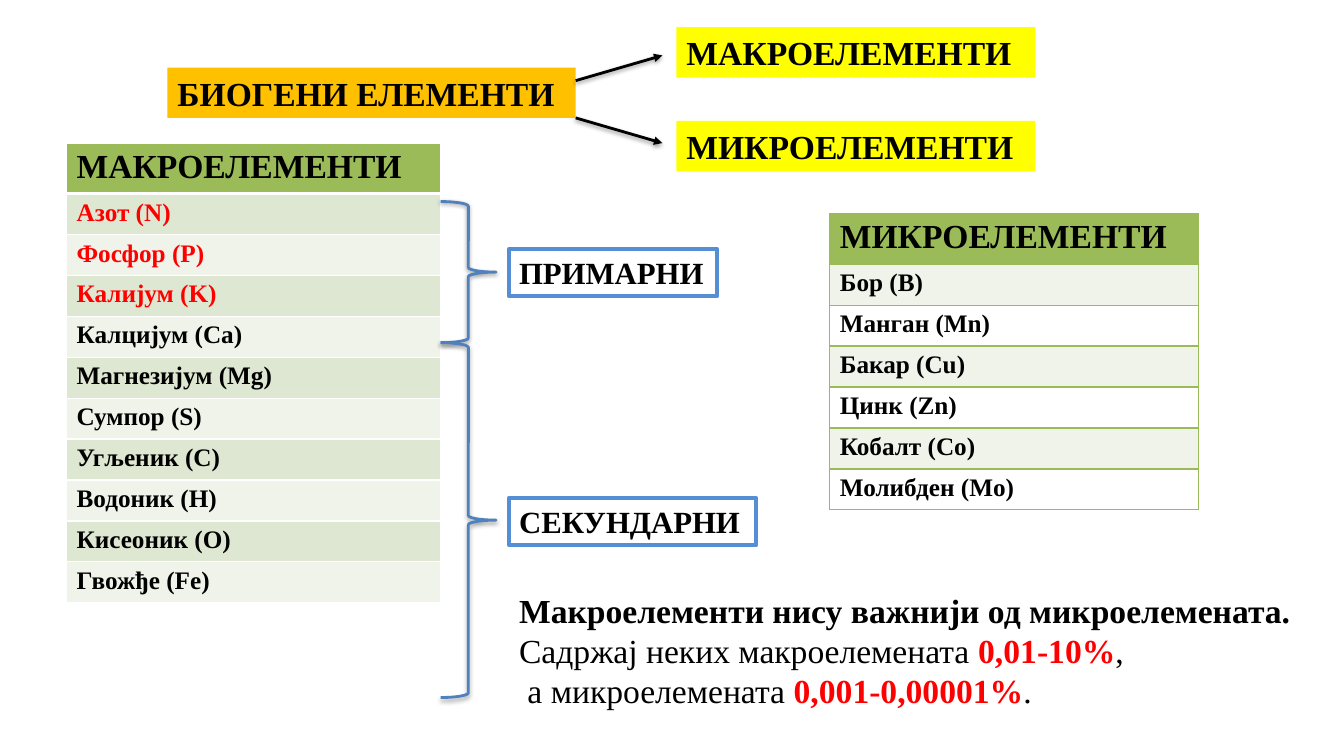
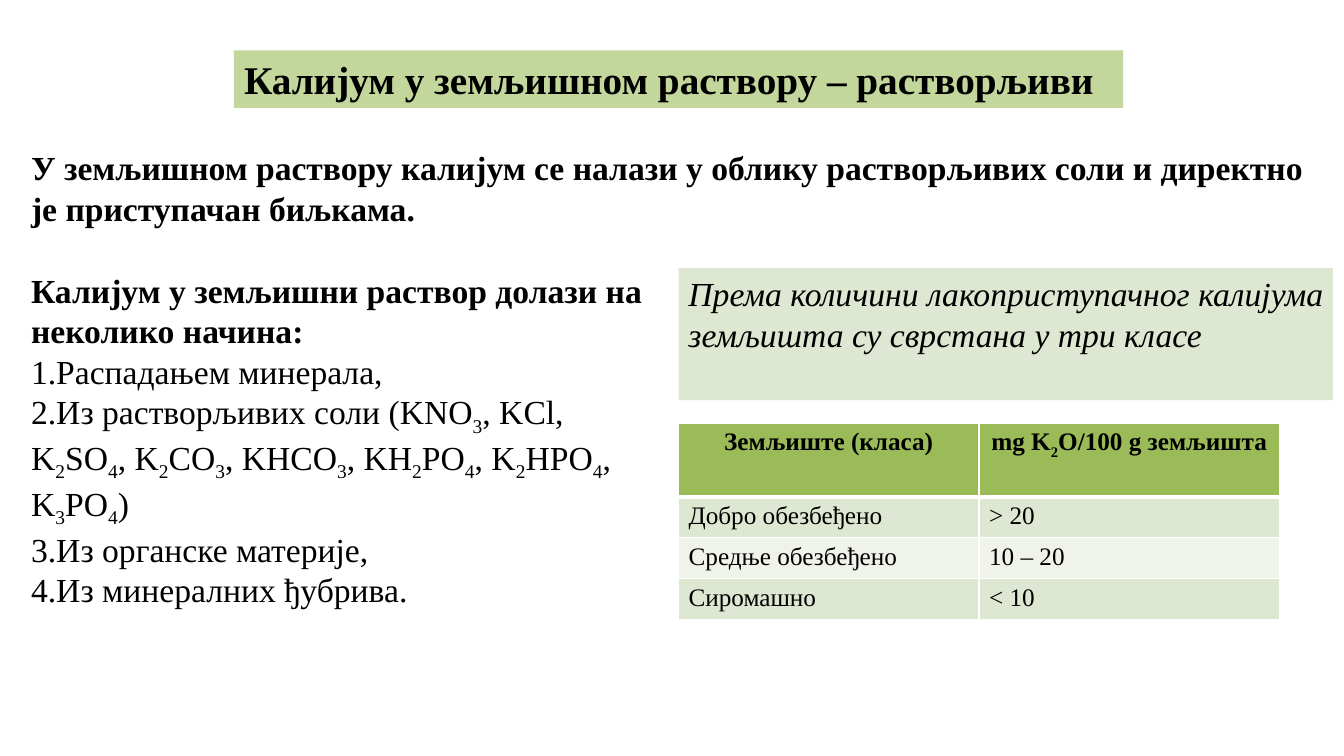
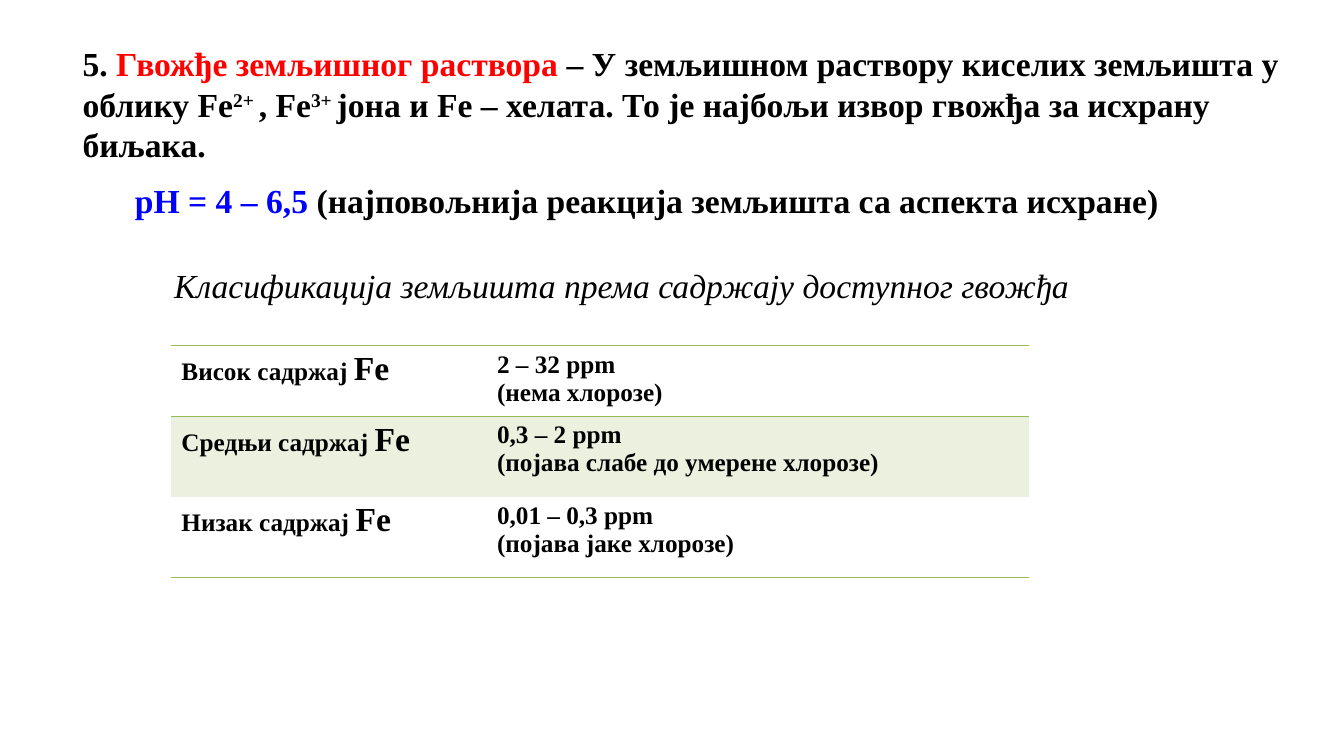
from lxml import etree
from pptx import Presentation
from pptx.dml.color import RGBColor
from pptx.enum.shapes import MSO_CONNECTOR, MSO_SHAPE
from pptx.enum.text import MSO_ANCHOR, MSO_AUTO_SIZE, PP_ALIGN
from pptx.oxml import parse_xml
from pptx.oxml.ns import nsdecls, qn
from pptx.util import Inches, Pt

TOP = MSO_ANCHOR.TOP
NO_AUTOFIT = MSO_AUTO_SIZE.NONE
LEFT, CENTER, JUSTIFY = PP_ALIGN.LEFT, PP_ALIGN.CENTER, PP_ALIGN.JUSTIFY
STRAIGHT = MSO_CONNECTOR.STRAIGHT
RIGHT_BRACE = MSO_SHAPE.RIGHT_BRACE
TITLE_ONLY, BLANK = 5, 6

FONT = "Times New Roman"
COLORS = {
    "black": "000000", "white": "FFFFFF", "red": "FF0000", "blue": "0000FF",
    "orange": "FFC000", "yellow": "FFFF00", "green": "9BBB59",
    "title_green": "C3D69B", "band": "DEE7D1", "band_light": "EFF3EA",
    "iron_band": "EBF1DE", "outline": "4F6228", "brace": "4F81BD", "frame": "558ED5",
}
BANDS = ("band", "band_light")
RED = {"color": "red"}
RED_BOLD = {"color": "red", "bold": True}
SUPERSCRIPT = {"baseline": 30}
SIDES = ("L", "R", "T", "B")


def rgb(name):
    return RGBColor.from_string(COLORS[name])


# Text: a paragraph is a string or a list of strings and (string, style) pairs
def style_run(run, size=24, color="black", bold=False, italic=False, baseline=0, outline=None):
    font = run.font
    font.name, font.size, font.bold, font.italic = FONT, Pt(size), bold, italic
    font.color.rgb = rgb(color)
    properties = run._r.get_or_add_rPr()
    if baseline:
        properties.set("baseline", str(baseline * 1000))
    if outline:
        properties.insert(0, parse_xml(
            f'<a:ln {nsdecls("a")} w="12700"><a:solidFill>'
            f'<a:srgbClr val="{COLORS[outline]}"/></a:solidFill></a:ln>'))


def write(frame, paragraphs, align=LEFT, **style):
    frame.word_wrap = True
    for index, parts in enumerate(paragraphs):
        paragraph = frame.add_paragraph() if index else frame.paragraphs[0]
        paragraph.alignment = align
        for part in [parts] if isinstance(parts, str) else parts:
            text, own_style = (part, {}) if isinstance(part, str) else part
            run = paragraph.add_run()
            run.text = text
            style_run(run, **{**style, **own_style})


def formula(text):
    """Split text into runs; the character after each underscore is a subscript."""
    first, *others = text.split("_")
    parts = [first]
    for other in others:
        parts.append((other[0], {"baseline": -25}))
        if other[1:]:
            parts.append(other[1:])
    return parts


# Shared shapes
def add_box(slide, box, paragraphs, fill=None, frame=None, **style):
    label = slide.shapes.add_textbox(*map(Inches, box))
    if fill:
        label.fill.solid()
        label.fill.fore_color.rgb = rgb(fill)
    if frame:
        label.line.color.rgb = rgb(frame)
        label.line.width = Pt(3)
    write(label.text_frame, paragraphs, **style)
    return label


def add_title(slide, box, text, fill, size):
    title = slide.shapes.title
    title.left, title.top, title.width, title.height = map(Inches, box)
    title.fill.solid()
    title.fill.fore_color.rgb = rgb(fill)
    title.text_frame.vertical_anchor = TOP
    title.text_frame.auto_size = NO_AUTOFIT
    write(title.text_frame, [text], size=size, bold=True)


def draw_line(shape, color):
    shape.line.color.rgb = rgb(color)
    shape.line.width = Pt(2)
    shape._element.spPr.append(parse_xml(
        f'<a:effectLst {nsdecls("a")}><a:outerShdw blurRad="40000" dist="20000" dir="5400000" '
        'rotWithShape="0"><a:srgbClr val="000000"><a:alpha val="38000"/></a:srgbClr>'
        '</a:outerShdw></a:effectLst>'))


def add_arrow(slide, start, end):
    arrow = slide.shapes.add_connector(STRAIGHT, *map(Inches, start + end))
    draw_line(arrow, "black")
    etree.SubElement(arrow.line._get_or_add_ln(), qn("a:tailEnd"), type="triangle")


def add_brace(slide, box):
    brace = slide.shapes.add_shape(RIGHT_BRACE, *map(Inches, box))
    brace.fill.background()
    draw_line(brace, "brace")


# Tables
def set_borders(cell, borders):
    properties = cell._tc.get_or_add_tcPr()
    for position, side in enumerate(SIDES):
        color, width = borders.get(side, (None, 0))
        paint = (f'<a:solidFill><a:srgbClr val="{COLORS[color]}"/></a:solidFill>'
                 if color else "<a:noFill/>")
        properties.insert(position, parse_xml(
            f'<a:ln{side} {nsdecls("a")} w="{width * 12700}">{paint}</a:ln{side}>'))


def add_grid(slide, left, top, widths, heights):
    grid = slide.shapes.add_table(
        len(heights), len(widths),
        *map(Inches, (left, top, sum(widths), sum(heights)))).table
    for column, width in zip(grid.columns, widths):
        column.width = Inches(width)
    for row, height in zip(grid.rows, heights):
        row.height = Inches(height)
    return grid


def format_cell(cell, fill, borders, paragraphs, **style):
    if fill:
        cell.fill.solid()
        cell.fill.fore_color.rgb = rgb(fill)
    else:
        cell.fill.background()
    set_borders(cell, borders)
    write(cell.text_frame, paragraphs, **style)


def add_banded_table(slide, left, top, widths, header_height, body_height, header, body,
                     header_style, bold=False, bands=BANDS, rule="white", header_rule=1):
    heights = [header_height] + [body_height / len(body)] * len(body)
    grid = add_grid(slide, left, top, widths, heights)
    for r, row in enumerate([header] + body):
        borders = {side: (rule, 1) for side in SIDES}
        if r < 2:
            borders["T" if r else "B"] = (rule, header_rule)
        fill = bands[(r - 1) % 2] if r else "green"
        style = {"size": 18, "bold": bold} if r else {"bold": True, **header_style}
        for c, parts in enumerate(row):
            format_cell(grid.cell(r, c), fill, borders, [parts], **style)


# Slide 1: macro- and microelements
def build_elements_slide(prs):
    slide = prs.slides.add_slide(prs.slide_layouts[TITLE_ONLY])
    group_style = {"size": 24, "outline": "outline"}

    # Branching into two groups
    add_title(slide, (1.66, 0.67, 4.05, 0.5), "БИОГЕНИ ЕЛЕМЕНТИ", "orange", 24)
    for group, top, start_y, end_y in (("МАКРОЕЛЕМЕНТИ", 0.27, 0.8, 0.55),
                                       ("МИКРОЕЛЕМЕНТИ", 1.2, 1.17, 1.42)):
        add_box(slide, (6.71, top, 3.56, 0.5), [group], fill="yellow", bold=True, **group_style)
        add_arrow(slide, (5.71, start_y), (6.57, end_y))

    # Element lists
    primary = ["Азот (N)", "Фосфор (P)", "Калијум (K)"]
    secondary = ["Калцијум (Ca)", "Магнезијум (Mg)", "Сумпор (S)", "Угљеник (C)",
                 "Водоник (H)", "Кисеоник (O)", "Гвожђе (Fe)"]
    micro = ["Бор (B)", "Манган (Mn)", "Бакар (Cu)", "Цинк (Zn)", "Кобалт (Co)",
             "Молибден (Mo)"]
    macro_rows = [[[(name, RED)]] for name in primary] + [[name] for name in secondary]
    add_banded_table(slide, 0.66, 1.42, [3.71], 0.5, 4.06, ["МАКРОЕЛЕМЕНТИ"], macro_rows,
                     group_style, bold=True, header_rule=3)
    add_banded_table(slide, 8.23, 2.12, [3.66], 0.5, 2.44, ["МИКРОЕЛЕМЕНТИ"],
                     [[name] for name in micro], group_style, bold=True,
                     bands=("band_light", "white"), rule="green")

    # Braces with their labels
    for label, brace_top, brace_height, label_top, label_width in (
            ("ПРИМАРНИ", 2, 1.4, 2.47, 2.06), ("СЕКУНДАРНИ", 3.4, 3.52, 4.94, 2.45)):
        add_brace(slide, (4.37, brace_top, 0.55, brace_height))
        add_box(slide, (5.05, label_top, label_width, 0.47), [label], frame="frame",
                size=22, bold=True)

    # Content ranges
    add_box(slide, (5.05, 5.8, 7.91, 1.31), [
        [("Макроелементи нису важнији од микроелемената.", {"bold": True})],
        ["Садржај неких макроелемената ", ("0,01-10%", RED_BOLD), ","],
        [" а микроелемената ", ("0,001-0,00001%", RED_BOLD), "."],
    ], align=JUSTIFY)


# Slide 2: potassium in the soil solution
def build_potassium_slide(prs):
    slide = prs.slides.add_slide(prs.slide_layouts[TITLE_ONLY])
    add_title(slide, (2.32, 0.5, 8.82, 0.57), "Калијум у земљишном раствору – растворљиви",
              "title_green", 28)
    add_box(slide, (0.21, 1.41, 12.96, 0.91), [
        "У земљишном раствору калијум се налази у облику растворљивих соли и директно "
        "је приступачан биљкама."], bold=True)

    # Numbered sources
    sources = add_box(slide, (0.21, 2.63, 6.39, 3.33), [
        [("Калијум у земљишни раствор долази на неколико начина:", {"bold": True})],
        "Распадањем минерала,",
        formula("Из растворљивих соли (KNO_3, KCl, K_2SO_4, K_2CO_3, KHCO_3, "
                "KH_2PO_4, K_2HPO_4, K_3PO_4)"),
        "Из органске материје,",
        "Из минералних ђубрива.",
    ])
    for source in sources.text_frame.paragraphs[1:]:
        properties = source._p.get_or_add_pPr()
        properties.set("marL", "0")
        properties.set("indent", "0")
        etree.SubElement(properties, qn("a:buAutoNum"), type="arabicPeriod")

    # Soil classes
    add_box(slide, (6.73, 2.66, 6.49, 1.31), [
        "Према количини лакоприступачног калијума земљишта су сврстана у три класе"],
        fill="band", align=JUSTIFY, italic=True)
    add_banded_table(slide, 6.73, 4.2, [2.98, 2.98], 0.73, 1.22,
                     ["Земљиште (класа)", formula("mg K_2O/100 g земљишта")],
                     [["Добро обезбеђено", "> 20"],
                      ["Средње обезбеђено", "10 – 20"],
                      ["Сиромашно", "< 10"]],
                     {"size": 18, "align": CENTER}, header_rule=3)


# Slide 3: iron in the soil solution
def add_iron_table(slide, left, top):
    levels = [("Висок", "2 – 32 ррm", "(нема хлорозе)"),
              ("Средњи", "0,3 – 2 ррm", "(појава слабе до умерене хлорозе)"),
              ("Низак", "0,01 – 0,3 ррm", "(појава јаке хлорозе)")]
    rule = ("green", 1)
    row_looks = [(None, {"T": rule, "B": rule}), ("iron_band", {"T": rule}), (None, {"B": rule})]
    grid = add_grid(slide, left, top, [3.13, 5.38], [0.7, 0.8, 0.8])
    grid.first_row = grid.horz_banding = False
    for r, ((level, content, effect), (fill, borders)) in enumerate(zip(levels, row_looks)):
        contents = [[f"{level} садржај ", ("Fe", {"size": 24})]], [content, effect]
        for c, paragraphs in enumerate(contents):
            format_cell(grid.cell(r, c), fill, borders, paragraphs, size=18, bold=True)


def build_iron_slide(prs):
    slide = prs.slides.add_slide(prs.slide_layouts[BLANK])
    add_box(slide, (0.72, 0.38, 12.15, 1.31), [[
        "5. ", ("Гвожђе земљишног раствора ", RED),
        "– У земљишном раствору киселих земљишта у облику Fe", ("2+ ", SUPERSCRIPT),
        ", Fe", ("3+ ", SUPERSCRIPT),
        "јона и Fe – хелата. То је најбољи извор гвожђа за исхрану биљака.",
    ]], fill="white", bold=True)
    add_box(slide, (1.24, 1.74, 10.85, 0.5), [[
        ("pH = 4 – 6,5", {"color": "blue"}),
        " (најповољнија реакција земљишта са аспекта исхране)",
    ]], fill="white", bold=True)
    add_box(slide, (1.63, 2.58, 9.14, 0.5), [
        "Класификација земљишта према садржају доступног гвожђа"], italic=True)
    add_iron_table(slide, 1.7, 3.43)


def main():
    prs = Presentation()
    prs.slide_width, prs.slide_height = Inches(13.33), Inches(7.5)
    build_elements_slide(prs)
    build_potassium_slide(prs)
    build_iron_slide(prs)
    prs.save("out.pptx")


if __name__ == "__main__":
    main()
